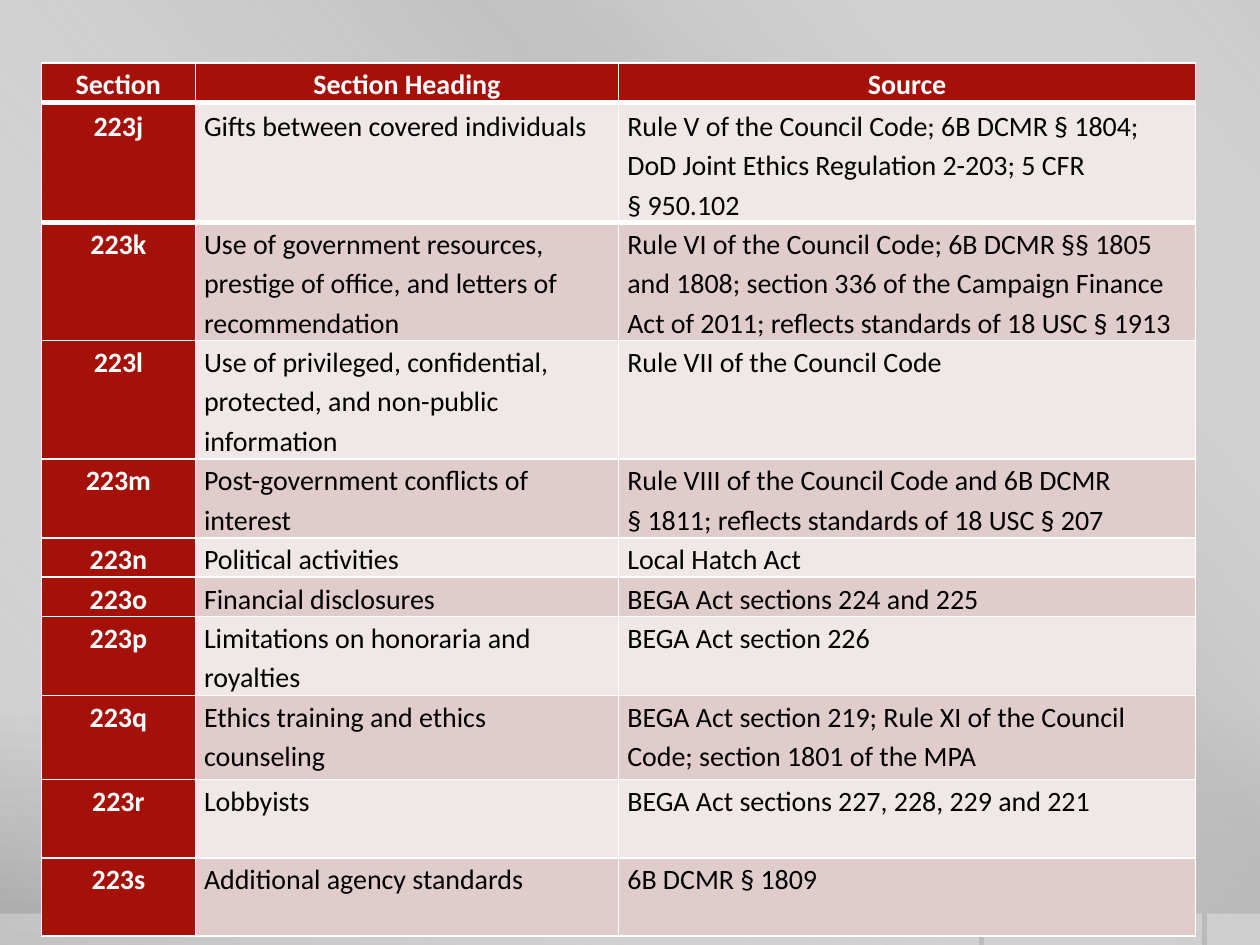
import pptx
import pptx.util
import pptx.dml.color
import pptx.enum.shapes
import pptx.enum.text
import pptx.oxml.ns
from lxml import etree

PX = 9144  # 100 px to the inch
RED, PALE, PINK, WHITE, BLACK = "A51009", "F0E7E7", "E1CCCC", "FFFFFF", "000000"
qn = pptx.oxml.ns.qn


def rgb(code):
    return pptx.dml.color.RGBColor.from_string(code)


def blend(owner, fill, stops, angle):
    """Fill with a linear gradient; stops are (percent, colour, opacity)."""
    fill.gradient()
    grad = owner.element.find(".//" + qn("a:gradFill"))
    items = grad.find(qn("a:gsLst"))
    for old in list(items):
        items.remove(old)
    for spot, code, alpha in stops:
        stop = etree.SubElement(items, qn("a:gs"), pos=str(spot * 1000))
        tint = etree.SubElement(stop, qn("a:srgbClr"), val=code)
        etree.SubElement(tint, qn("a:alpha"), val=str(alpha * 1000))
    grad.find(qn("a:lin")).set("ang", str(angle * 60000))


deck = pptx.Presentation()
deck.slide_width = 1000 * PX
deck.slide_height = 750 * PX
slide = deck.slides.add_slide(deck.slide_layouts[6])

# Backdrop: grey gradient, diagonal sheen and three strips at the foot
blend(slide, slide.background.fill,
      [(0, "CBCBCB", 100), (76, "C8C8C8", 100), (100, "A7A7A7", 100)], 90)
for x, y, w, h in [(0, 0, 1000, 750), (958, 725, 42, 25),
                   (781, 725, 173, 25), (0, 725, 777, 25)]:
    rect = slide.shapes.add_shape(pptx.enum.shapes.MSO_SHAPE.RECTANGLE,
                                  x * PX, y * PX, w * PX, h * PX)
    rect.shadow.inherit = False
    rect.line.fill.background()
    if y == 0:
        blend(rect, rect.fill, [(0, WHITE, 0), (34, "BFBFBF", 61),
                                (38, "BFBFBF", 76), (100, WHITE, 0)], 140)
    else:
        rect.fill.solid()
        rect.fill.fore_color.rgb = rgb(WHITE)
        tint = rect.element.spPr.find(".//" + qn("a:srgbClr"))
        etree.SubElement(tint, qn("a:alpha"), val="30000")

# Each row: height, then the cells; a line break parts two paragraphs
body = [
    (92, "223j", "Gifts between covered individuals",
     "Rule V of the Council Code; 6B DCMR § 1804; DoD Joint Ethics Regulation 2-203; 5 CFR\n"
     "§ 950.102"),
    (93, "223k", "Use of government resources, prestige of office, and letters of recommendation",
     "Rule VI of the Council Code; 6B DCMR §§ 1805 and 1808; section 336 of the "
     "Campaign Finance Act of 2011; reflects standards of 18 USC § 1913"),
    (94, "223l", "Use of privileged, confidential, protected, and non-public information",
     "Rule VII of the Council Code"),
    (58, "223m", "Post-government conflicts of interest",
     "Rule VIII of the Council Code and 6B DCMR\n"
     "§ 1811; reflects standards of 18 USC § 207"),
    (31, "223n", "Political activities", "Local Hatch Act"),
    (31, "223o", "Financial disclosures", "BEGA Act sections 224 and 225"),
    (62, "223p", "Limitations on honoraria and royalties", "BEGA Act section 226"),
    (67, "223q", "Ethics training and ethics counseling",
     "BEGA Act section 219; Rule XI of the Council Code; section 1801 of the MPA"),
    (62, "223r", "Lobbyists", "BEGA Act sections 227, 228, 229 and 221"),
    (62, "223s", "Additional agency standards", "6B DCMR § 1809"),
]
head = [(20, "Section", "Section Heading", "Source")]
widths = [122, 336, 458]

for top, rows in [(83, body), (50, head)]:
    frame = slide.shapes.add_table(len(rows), len(widths), 33 * PX, top * PX,
                                   sum(widths) * PX, sum(row[0] for row in rows) * PX)
    table = frame.table
    table.first_row = table.horz_banding = False
    for col, width in enumerate(widths):
        table.columns[col].width = width * PX
    for r, (height, *texts) in enumerate(rows):
        table.rows[r].height = height * PX
        for c, text in enumerate(texts):
            cell = table.cell(r, c)
            label = c == 0 or rows is head
            cell.margin_left = cell.margin_right = 7 * PX
            cell.margin_top = cell.margin_bottom = 0
            props = cell._tc.get_or_add_tcPr()
            for side in "LRTB":
                thick = (r, side) in [(0, "B"), (1, "T")]
                edge = etree.SubElement(props, qn("a:ln" + side),
                                        w=str(pptx.util.Pt(3 if thick else 1)))
                paint = etree.SubElement(edge, qn("a:solidFill"))
                etree.SubElement(paint, qn("a:srgbClr"), val=WHITE)
            cell.fill.solid()
            cell.fill.fore_color.rgb = rgb(RED if label else (PALE, PINK)[r % 2])
            for i, line in enumerate(text.split("\n")):
                para = cell.text_frame.add_paragraph() if i else cell.text_frame.paragraphs[0]
                para.line_spacing = 1.15
                if label:
                    para.alignment = pptx.enum.text.PP_ALIGN.CENTER
                run = para.add_run()
                run.text = line
                run.font.name = "Calibri"
                run.font.size = pptx.util.Pt(16)
                run.font.bold = label
                run.font.color.rgb = rgb(WHITE if label else BLACK)

deck.save("out.pptx")
